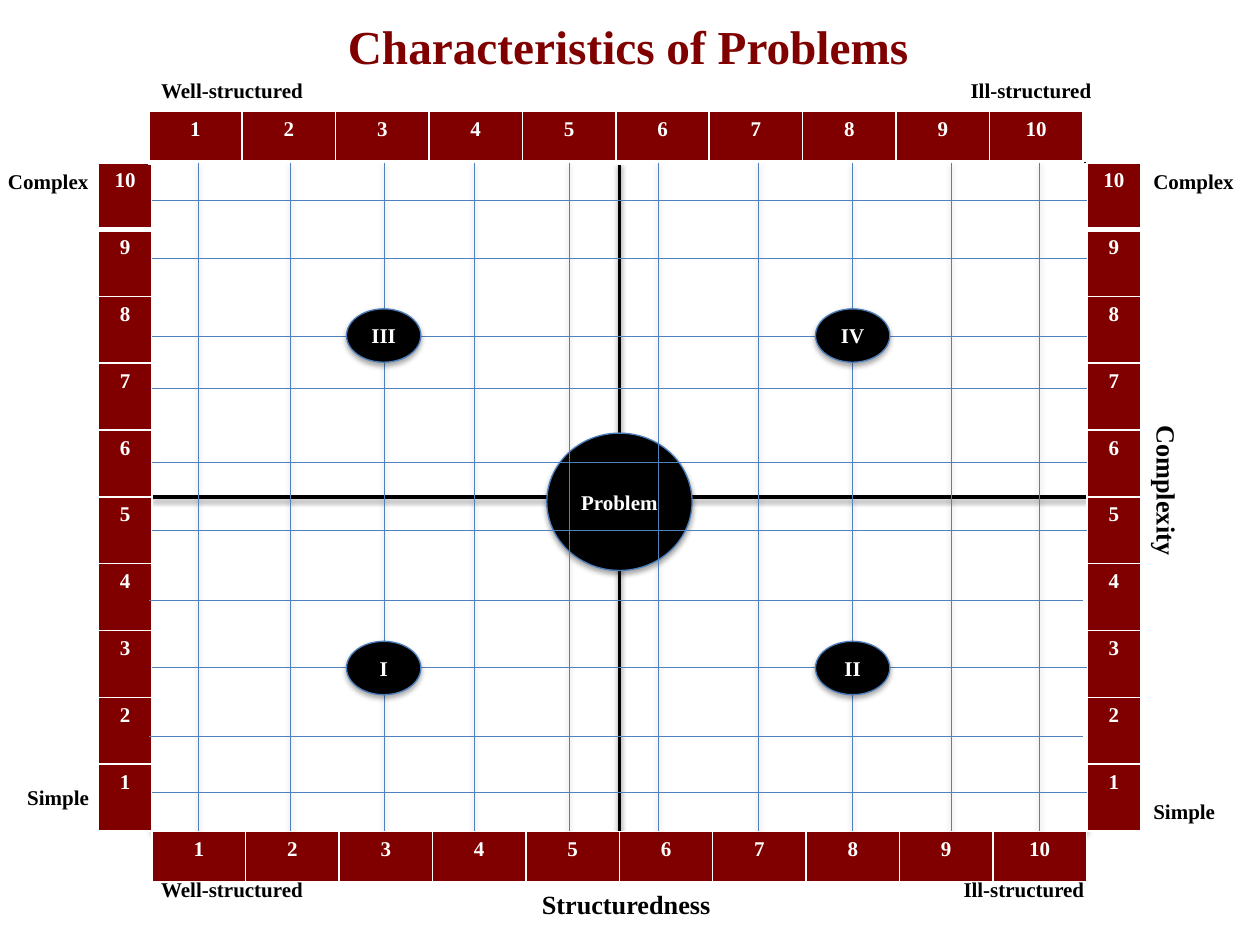
from dataclasses import dataclass

from lxml.etree import SubElement
from pptx import Presentation
from pptx.dml.color import RGBColor
from pptx.enum.shapes import MSO_CONNECTOR, MSO_SHAPE
from pptx.enum.text import MSO_ANCHOR, MSO_AUTO_SIZE, PP_ALIGN
from pptx.oxml.ns import qn
from pptx.util import Pt

MAROON = RGBColor(0x80, 0x00, 0x00)
BLACK = RGBColor(0x00, 0x00, 0x00)
WHITE = RGBColor(0xFF, 0xFF, 0xFF)
GRID_BLUE = RGBColor(0x4F, 0x81, 0xBD)
OUTLINE_BLUE = RGBColor(0x4B, 0x7E, 0xBC)
FONT_FORMAT = {"name": "Times New Roman", "bold": True}


@dataclass(frozen=True)
class Area:
    left: float
    top: float
    width: float
    height: float

    @property
    def right(self) -> float:
        return self.left + self.width

    @property
    def bottom(self) -> float:
        return self.top + self.height

    def lengths(self) -> list:
        return [Pt(n) for n in (self.left, self.top, self.width, self.height)]


@dataclass(frozen=True)
class Label:
    text: str
    area: Area
    size: float = 12
    rotation: float = 0


@dataclass(frozen=True)
class Scale:
    area: Area
    vertical: bool = False


PLOT = Area(87, 93, 534, 382)
SIDE_WIDTH, BAND_HEIGHT, STEPS = 31, 29.5, 10

# Grid positions, set by hand on the slide
GRID_X = (113, 166, 219.5, 271, 325, 376, 433.5, 487, 543.5, 594)
GRID_Y = (114.5, 147.5, 192, 222, 264, 303, 343, 381.5, 420.5, 453)
SHIFTED_Y = (343, 420.5)

SCALES = (
    Scale(Area(PLOT.left, PLOT.bottom, PLOT.width, BAND_HEIGHT)),
    Scale(Area(PLOT.right, PLOT.top, SIDE_WIDTH, PLOT.height), vertical=True),
    Scale(Area(PLOT.left - SIDE_WIDTH, PLOT.top, SIDE_WIDTH, PLOT.height), vertical=True),
    Scale(Area(PLOT.left - 2, PLOT.top - BAND_HEIGHT, PLOT.width, BAND_HEIGHT)),
)

LABELS = (
    Label("Well-structured", Area(85, 41, 96.5, 21.5)),
    Label("Ill-structured", Area(547.5, 41, 84, 21.5)),
    Label("Well-structured", Area(85, 497.5, 96.5, 21.5)),
    Label("Ill-structured", Area(543.5, 497.5, 84, 21.5)),
    Label("Complex", Area(-2.5, 93, 61.5, 21.5)),
    Label("Complex", Area(652, 93, 61.5, 21.5)),
    Label("Simple", Area(8.5, 445, 50.5, 21.5)),
    Label("Simple", Area(652, 453, 50.5, 21.5)),
    Label("Structuredness", Area(302.5, 504, 112, 25), 15),
    Label("Complexity", Area(622, 268.5, 90, 25), 15, 90),
)

PROBLEM = Label("Problem", Area(312.5, 247.5, 83, 78.5))
QUADRANTS = tuple(
    Label(text, Area(left, top, 42.5, 30.5))
    for text, left, top in (
        ("I", 198, 366.5), ("II", 466, 366.5), ("III", 198, 176.5), ("IV", 466, 176.5)
    )
)


def format_font(font, size: float, color: RGBColor) -> None:
    for name, value in {**FONT_FORMAT, "size": Pt(size)}.items():
        setattr(font, name, value)
    font.color.rgb = color


def format_line(line, color: RGBColor, width: float) -> None:
    line.color.rgb = color
    line.width = Pt(width)


def add_shadow(shape, opacity: int, distance: float) -> None:
    """Call after fill and line, so the effect list comes last."""
    effects = SubElement(shape.element.spPr, qn("a:effectLst"))
    shadow = SubElement(effects, qn("a:outerShdw"), blurRad=str(Pt(3.1)),
                        dist=str(Pt(distance)), dir="5400000", rotWithShape="0")
    color = SubElement(shadow, qn("a:srgbClr"), val=str(BLACK))
    SubElement(color, qn("a:alpha"), val=str(opacity * 1000))


def add_line(slide, start: tuple, end: tuple, color: RGBColor, width: float):
    points = [Pt(n) for n in (*start, *end)]
    connector = slide.shapes.add_connector(MSO_CONNECTOR.STRAIGHT, *points)
    format_line(connector.line, color, width)
    add_shadow(connector, 38, 1.6)
    return connector


def add_filled_shape(slide, kind, area: Area, fill: RGBColor, outline: RGBColor):
    shape = slide.shapes.add_shape(kind, *area.lengths())
    shape.fill.solid()
    shape.fill.fore_color.rgb = fill
    format_line(shape.line, outline, 0.75)
    add_shadow(shape, 35, 1.8)
    return shape


def add_plot(slide) -> None:
    box = add_filled_shape(slide, MSO_SHAPE.RECTANGLE, PLOT, WHITE, BLACK)
    middle_x, middle_y = PLOT.left + PLOT.width / 2, PLOT.top + PLOT.height / 2
    axes = (
        ((PLOT.left, middle_y), (PLOT.right, middle_y), 1, 3),
        ((middle_x, PLOT.top), (middle_x, PLOT.bottom), 0, 2),
    )
    parts = [box]
    for start, end, first_side, last_side in axes:
        axis = add_line(slide, start, end, BLACK, 2)
        axis.begin_connect(box, first_side)
        axis.end_connect(box, last_side)
        parts.append(axis)
    slide.shapes.add_group_shape(parts)


def add_ellipse(slide, label: Label) -> None:
    ellipse = add_filled_shape(slide, MSO_SHAPE.OVAL, label.area, BLACK, OUTLINE_BLUE)
    frame = ellipse.text_frame
    frame.word_wrap = False
    frame.vertical_anchor = MSO_ANCHOR.MIDDLE
    paragraph = frame.paragraphs[0]
    paragraph.text = label.text
    paragraph.alignment = PP_ALIGN.CENTER
    format_font(paragraph.font, label.size, WHITE)


def add_label(slide, label: Label) -> None:
    box = slide.shapes.add_textbox(*label.area.lengths())
    box.rotation = label.rotation
    box.text_frame.word_wrap = False
    box.text_frame.auto_size = MSO_AUTO_SIZE.SHAPE_TO_FIT_TEXT
    paragraph = box.text_frame.paragraphs[0]
    paragraph.text = label.text
    format_font(paragraph.font, label.size, BLACK)


def format_cell(cell, text: str, top: float, bottom: float) -> None:
    properties = cell._tc.get_or_add_tcPr()
    for side, width in {"L": 1, "R": 1, "T": top, "B": bottom}.items():
        border = SubElement(properties, qn(f"a:ln{side}"), w=str(Pt(width)))
        fill = SubElement(border, qn("a:solidFill"))
        SubElement(fill, qn("a:srgbClr"), val=str(WHITE))
    cell.fill.solid()
    cell.fill.fore_color.rgb = MAROON
    paragraph = cell.text_frame.paragraphs[0]
    paragraph.text = text
    paragraph.alignment = PP_ALIGN.CENTER
    format_font(paragraph.font, 12, WHITE)


def add_scale(slide, scale: Scale) -> None:
    rows, columns = (STEPS, 1) if scale.vertical else (1, STEPS)
    table = slide.shapes.add_table(rows, columns, *scale.area.lengths()).table
    table.first_row = table.horz_banding = False
    for index, cell in enumerate(table.iter_cells()):
        value = STEPS - index if scale.vertical else index + 1
        row = index if scale.vertical else 0
        # The first row is set off by a thicker border
        format_cell(cell, str(value), 3 if row == 1 else 1, 3 if row == 0 else 1)


def add_title(slide) -> None:
    title = slide.shapes.title
    title.left, title.top, title.width, title.height = Area(170, 6, 378, 57).lengths()
    frame = title.text_frame
    frame.auto_size = MSO_AUTO_SIZE.NONE
    frame.vertical_anchor = MSO_ANCHOR.TOP
    paragraph = frame.paragraphs[0]
    paragraph.text = "Characteristics of Problems"
    paragraph.alignment = PP_ALIGN.CENTER
    format_font(paragraph.font, 27, MAROON)


def main() -> None:
    presentation = Presentation()
    presentation.slide_width, presentation.slide_height = Pt(720), Pt(540)
    slide = presentation.slides.add_slide(presentation.slide_layouts[5])

    add_title(slide)
    add_plot(slide)
    add_ellipse(slide, PROBLEM)
    for scale in SCALES:
        add_scale(slide, scale)

    # Fine grid
    for x in GRID_X:
        add_line(slide, (x, PLOT.top), (x, PLOT.bottom), GRID_BLUE, 0.25)
    for y in GRID_Y:
        left = PLOT.left - (2 if y in SHIFTED_Y else 0)
        add_line(slide, (left, y), (left + PLOT.width, y), GRID_BLUE, 0.25)

    for label in LABELS:
        add_label(slide, label)
    for quadrant in QUADRANTS:
        add_ellipse(slide, quadrant)
    presentation.save("out.pptx")


if __name__ == "__main__":
    main()
